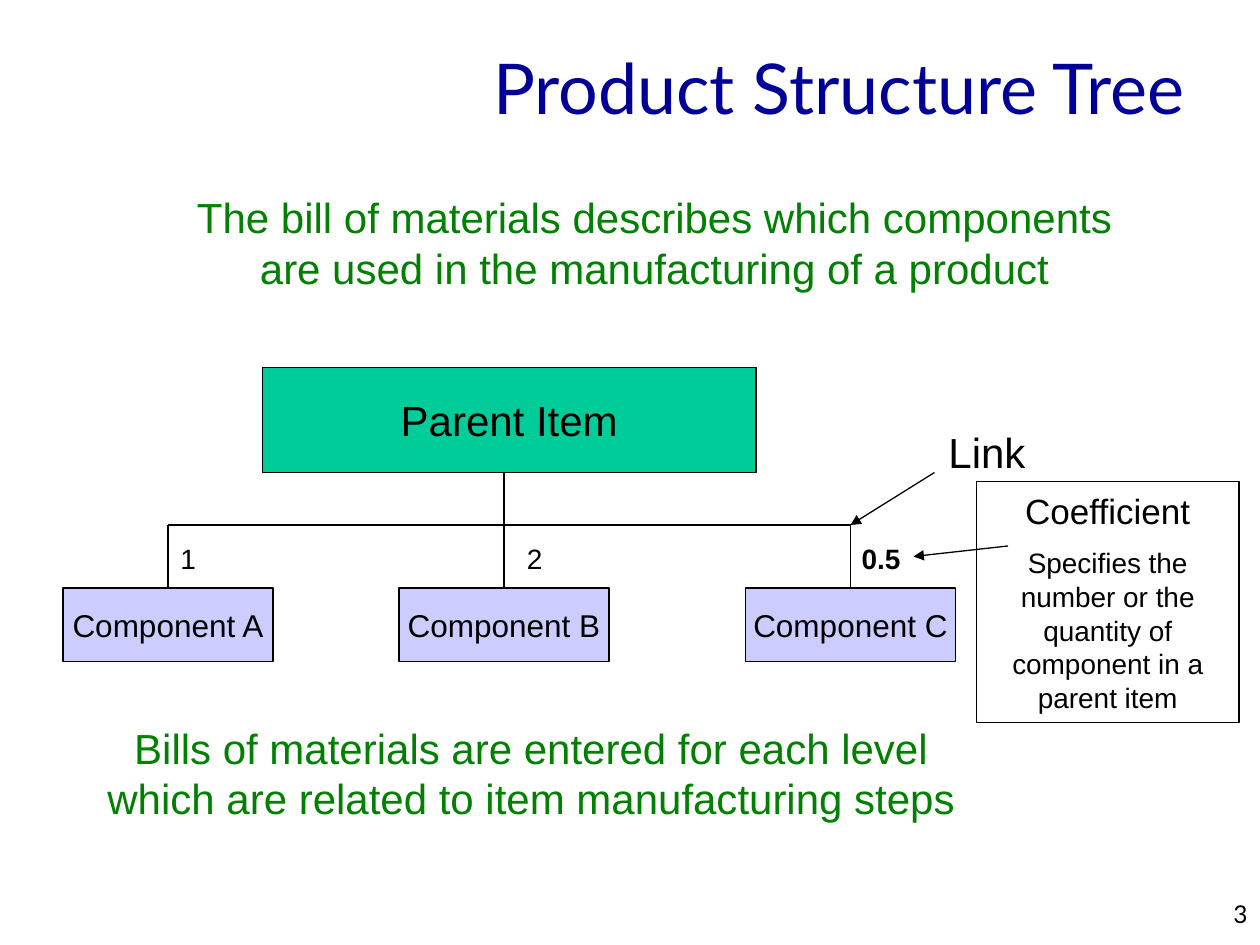
import pptx
import pptx.dml.color
import pptx.enum.shapes
import pptx.enum.text
import pptx.oxml
import pptx.oxml.ns
import pptx.util

Pt = pptx.util.Pt
ALIGN = pptx.enum.text.PP_ALIGN
ANCHOR = pptx.enum.text.MSO_ANCHOR
BLACK, GREEN = "000000", "008000"


def color(value):
    return pptx.dml.color.RGBColor.from_string(value)


def place(shape, box):
    for name, value in zip(("left", "top", "width", "height"), box):
        setattr(shape, name, Pt(value))


def write_paragraph(paragraph, text, size, fill=BLACK, font="Arial",
                    align=ALIGN.CENTER, bold=False):
    paragraph.alignment = align
    for index, line in enumerate(text.split("\n")):
        if index:
            paragraph.add_line_break()
        run = paragraph.add_run()
        run.text = line
        formats = {"size": Pt(size), "name": font, "bold": bold}
        for name, value in formats.items():
            setattr(run.font, name, value)
        run.font.color.rgb = color(fill)


def add_label(slide, box, text, size, anchor=ANCHOR.MIDDLE, **formats):
    shape = slide.shapes.add_textbox(*map(Pt, box))
    shape.text_frame.word_wrap = False
    shape.text_frame.vertical_anchor = anchor
    write_paragraph(shape.text_frame.paragraphs[0], text, size, **formats)


def add_box(slide, box, fill=None):
    shape = slide.shapes.add_shape(
        pptx.enum.shapes.MSO_SHAPE.RECTANGLE, *map(Pt, box))
    shape.shadow.inherit = False
    if fill:
        shape.fill.solid()
        shape.fill.fore_color.rgb = color(fill)
    else:
        shape.fill.background()
    shape.line.color.rgb = color(BLACK)
    shape.line.width = Pt(0.75)
    shape.text_frame.vertical_anchor = ANCHOR.MIDDLE
    return shape


def add_item(slide, box, text, size, fill):
    frame = add_box(slide, box, fill).text_frame
    frame.word_wrap = False
    write_paragraph(frame.paragraphs[0], text, size)


def add_line(slide, start, end, arrow=False):
    line = slide.shapes.add_connector(
        pptx.enum.shapes.MSO_CONNECTOR.STRAIGHT, *map(Pt, start + end))
    line.line.color.rgb = color(BLACK)
    line.line.width = Pt(0.75)
    if arrow:
        tail = pptx.oxml.parse_xml(
            f'<a:tailEnd {pptx.oxml.ns.nsdecls("a")} type="triangle"/>')
        line.line._get_or_add_ln().append(tail)
    line._element.spPr.append(
        pptx.oxml.parse_xml(f'<a:effectLst {pptx.oxml.ns.nsdecls("a")}/>'))


def add_title(slide, box, text):
    title = slide.shapes.title
    place(title, box)
    title.text_frame.vertical_anchor = ANCHOR.MIDDLE
    write_paragraph(title.text_frame.paragraphs[0], text, 40, "000099",
                    "Lato", ALIGN.RIGHT)


def add_tree(slide, box):
    left, top, width, height = box
    item_width, item_height = 120, 42
    item_top = top + height - item_height
    bus = top + 90
    components = [  # name, left offset, coefficient, its left and width, bold
        ("Component A", 0, "1", 60, 23, False),
        ("Component B", 192, "2", 258, 23, False),
        ("Component C", width - item_width, "0.5", 448, 39, True),
    ]
    centers = [left + part[1] + item_width / 2 for part in components]

    # Parent and its links
    add_item(slide, (left + 114, top, 282, 60), "Parent Item", 24, "00CC99")
    add_line(slide, (centers[0], bus), (centers[-1], bus))
    for center, start in zip(centers, (bus, top + 60, bus)):
        add_line(slide, (center, start), (center, item_top))

    # Components and their coefficients
    for name, offset, number, number_left, number_width, bold in components:
        add_item(slide, (left + offset, item_top, item_width, item_height),
                 name, 18, "CCCCFF")
        add_label(slide, (left + number_left, bus + 6, number_width, 26.5),
                  number, 16, bold=bold)


def add_callouts(slide, box):
    left, top, width, height = box
    # Link
    add_label(slide, (left - 25, top - 35, 62, 36), "Link", 24)
    add_line(slide, (left - 24, top - 5), (left - 72, top + 25), arrow=True)

    # Coefficient
    frame = add_box(slide, box).text_frame
    frame.word_wrap = True
    write_paragraph(frame.paragraphs[0], "Coefficient", 20)
    detail = frame.add_paragraph()
    detail.space_before = Pt(8)
    write_paragraph(detail, "Specifies the number or the quantity of "
                    "component in a parent item", 16)
    add_line(slide, (left + 18, top + 37), (left - 36, top + 43), arrow=True)


def main():
    presentation = pptx.Presentation()
    presentation.slide_width, presentation.slide_height = Pt(720), Pt(540)
    slide = presentation.slides.add_slide(presentation.slide_layouts[5])

    add_title(slide, (24, 9, 660, 81), "Product Structure Tree")
    add_label(slide, (105, 106, 538, 65),
              "The bill of materials describes which components\n"
              "are used in the manufacturing of a product", 24, fill=GREEN)
    add_tree(slide, (36, 210, 510, 168))
    add_callouts(slide, (558, 275, 150, 138))
    add_label(slide, (54, 409, 499, 65),
              "Bills of materials are entered for each level\n"
              "which are related to item manufacturing steps", 24, fill=GREEN)

    # Slide number
    add_label(slide, (570, 510, 150, 18), "3", 14, anchor=ANCHOR.TOP,
              font="Lato", align=ALIGN.RIGHT)
    presentation.save("out.pptx")


if __name__ == "__main__":
    main()
